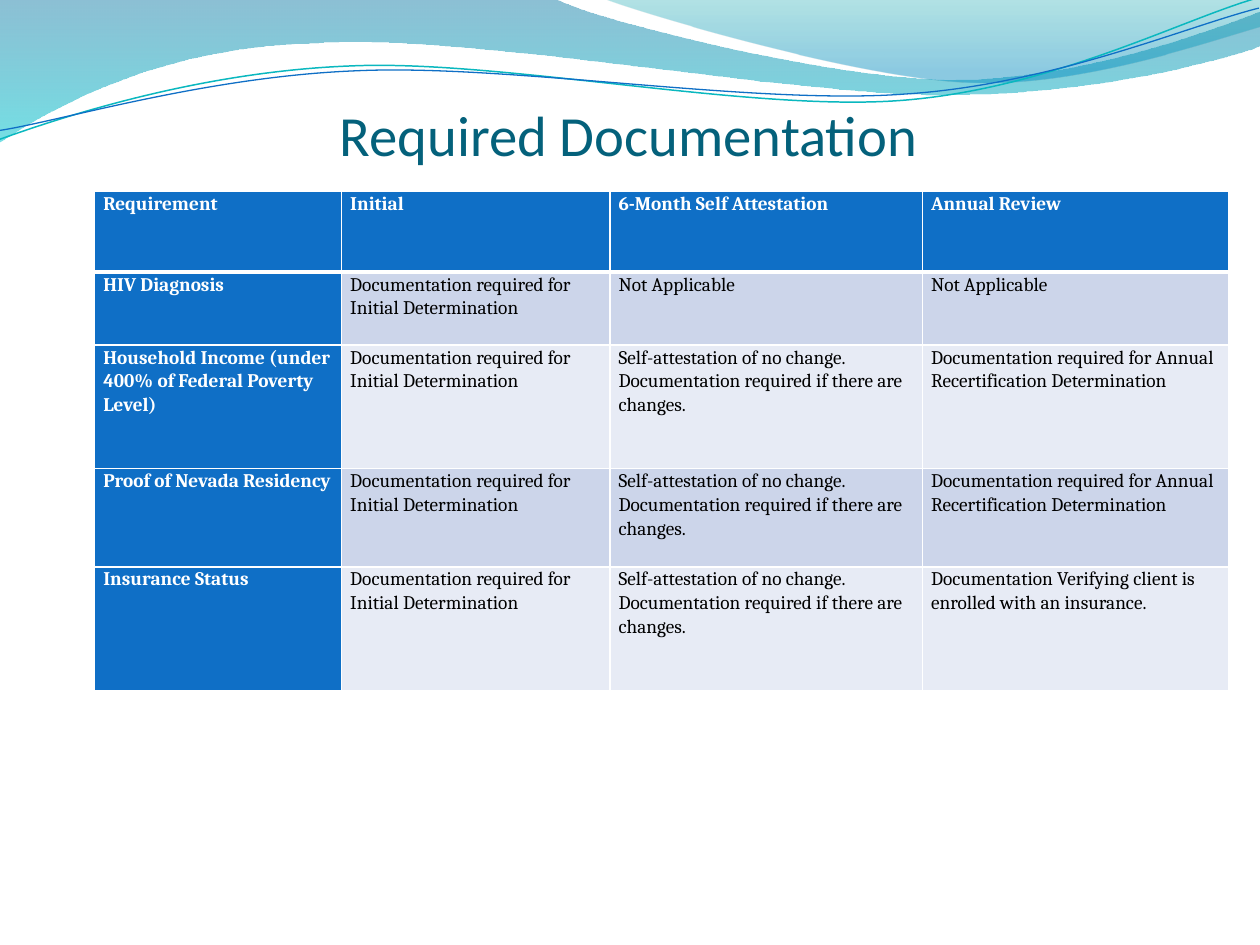
from dataclasses import dataclass

from lxml.etree import SubElement
from pptx import Presentation
from pptx.dml.color import RGBColor
from pptx.enum.text import MSO_ANCHOR, MSO_AUTO_SIZE, PP_ALIGN
from pptx.oxml.ns import qn
from pptx.util import Inches, Pt


@dataclass(frozen=True)
class Theme:
    title_font: str = "Calibri"
    table_font: str = "Cambria"
    title_size: float = 32.4
    table_size: float = 11
    title: str = "04617B"
    accent: str = "0F6FC6"
    teal: str = "0AB8BF"
    white: str = "FFFFFF"
    black: str = "000000"
    bands: tuple = ("CCD5EA", "E7EBF5")


theme = Theme()
prs = Presentation()
prs.slide_width, prs.slide_height = Inches(10), Inches(7.5)
title_only = prs.slide_layouts[5]
slide = prs.slides.add_slide(title_only)


def rgb(value):
    return RGBColor.from_string(value)


def add_wave(start, segments, closed):
    """Put straight (x, y) and cubic (x1, y1, x2, y2, x, y) segments on the layout."""
    builder = slide.shapes.build_freeform(Inches(start[0]), Inches(start[1]))
    builder.add_line_segments(
        [(Inches(x), Inches(y)) for segment in segments
         for x, y in zip(segment[::2], segment[1::2])], close=closed)
    wave = builder.convert_to_shape()
    wave.shadow.inherit = False
    # Merge the three points of each cubic segment into one curve
    lines = iter(list(wave._element.iter(qn("a:lnTo"))))
    for segment in segments:
        curve = next(lines)
        if len(segment) == 6:
            curve.tag = qn("a:cubicBezTo")
            for _ in range(2):
                line = next(lines)
                curve.append(line[0])
                line.getparent().remove(line)
    backdrop = title_only.shapes._spTree
    wave._element.nvSpPr.cNvPr.set("id", str(100 + len(backdrop)))
    backdrop.append(wave._element)
    return wave


# Translucent bands: start, segments, stops of (position, colour, opacity %)
bands = [
    ((0, 0),
     [(4.4, -0.01), (4.76, 0.17, 6.64, 0.63, 7.58, 0.63),
      (8.53, 0.63, 9.58, 0.26, 10, 0.09), (10.01, 0.36),
      (9.83, 0.44, 8.7, 0.76, 7.46, 0.75), (6.22, 0.75, 3.82, 0.28, 2.57, 0.34),
      (1.29, 0.36, 0.46, 0.83, -0.01, 1.13), (0, 0)],
     [(0, "0074A1", 45), (1, "00C6CF", 55)]),
    ((4.79, -0.01),
     [(5.09, 0.11, 6.82, 0.62, 7.69, 0.65), (8.56, 0.69, 9.61, 0.32, 10, 0.21),
      (10, 0), (4.79, -0.01)],
     [(0, "00A1A9", 30), (0.8, "008BBF", 45)]),
]
for start, segments, colours in bands:
    band = add_wave(start, segments, closed=True)
    band.line.fill.background()
    band.fill.gradient()
    band.fill.gradient_angle = 270  # top to bottom
    for stop, (position, colour, _) in zip(band.fill.gradient_stops, colours):
        stop.position = position
        stop.color.rgb = rgb(colour)
    for node, (_, _, opacity) in zip(band._element.iter(qn("a:srgbClr")), colours):
        SubElement(node, qn("a:alpha"), val=str(opacity * 1000))

# Thin wave lines, tilted as a whole: start, segments, colour, width
strands = [
    ((-0.02, 0.87),
     [(0.47, 0.72, 1.58, 0.41, 2.78, 0.42), (3.96, 0.42, 5.91, 0.93, 7.12, 0.9),
      (8.32, 0.87, 9.4, 0.36, 10, 0.22)], theme.teal, 0.85),
    ((-0.02, 0.8),
     [(0.46, 0.75, 1.64, 0.45, 2.83, 0.46), (4.03, 0.46, 5.96, 0.88, 7.16, 0.85),
      (8.35, 0.83, 9.42, 0.42, 10.01, 0.3)], theme.accent, 0.75),
]
for start, segments, colour, width in strands:
    strand = add_wave(start, segments, closed=False)
    strand.rotation = 357.3
    strand.fill.background()
    strand.line.color.rgb = rgb(colour)
    strand.line.width = Pt(width)

title = slide.shapes.title
title.left, title.top = Inches(0.5), Inches(0.77)
title.width, title.height = Inches(9.08), Inches(0.56)
heading = title.text_frame
heading.text = "Required Documentation "
heading.auto_size = MSO_AUTO_SIZE.NONE
heading.vertical_anchor = MSO_ANCHOR.BOTTOM
heading.margin_left = heading.margin_right = heading.margin_bottom = 0
heading.margin_top = Inches(0.05)
heading.paragraphs[0].alignment = PP_ALIGN.CENTER
title_font = heading.paragraphs[0].runs[0].font
title_font.name, title_font.size = theme.title_font, Pt(theme.title_size)
title_font.color.rgb = rgb(theme.title)

initial = "Documentation required for Initial Determination"
no_change = "Self-attestation of no change."
changes = "Documentation required if there are changes."
annual = "Documentation required for Annual Recertification Determination"
requirements = [
    ("Requirement", "Initial", "6-Month Self Attestation", "Annual Review"),
    ("HIV Diagnosis", initial, "Not Applicable", "Not Applicable"),
    ("Household Income (under 400% of Federal Poverty Level)", initial,
     f"{no_change}\n{changes}", annual),
    ("Proof of Nevada Residency", initial, f"{no_change} {changes}", annual),
    ("Insurance Status", initial, f"{no_change} {changes}",
     "Documentation Verifying client is enrolled with an insurance."),
]
column_widths = (1.96, 2.13, 2.48, 2.43)
row_heights = (0.64, 0.58, 0.98, 0.78, 0.98)

table = slide.shapes.add_table(
    len(row_heights), len(column_widths), Inches(0.75), Inches(1.52),
    Inches(sum(column_widths)), Inches(sum(row_heights))).table
table.first_col = True
for column, width in zip(table.columns, column_widths):
    column.width = Inches(width)
for row, height in zip(table.rows, row_heights):
    row.height = Inches(height)

for r, entries in enumerate(requirements):
    for c, entry in enumerate(entries):
        cell = table.cell(r, c)
        is_label = r == 0 or c == 0
        cell.text_frame.text = entry
        cell.margin_left = cell.margin_right = Inches(0.07)
        cell.margin_top = cell.margin_bottom = 0
        # Borders go before the fill in the cell's properties
        for side in "LRTB":
            heavy = (r == 0 and side == "B") or (r == 1 and side == "T")
            border = SubElement(cell._tc.get_or_add_tcPr(), qn(f"a:ln{side}"),
                                w=str(Pt(3 if heavy else 1)))
            SubElement(SubElement(border, qn("a:solidFill")), qn("a:srgbClr"),
                       val=theme.white)
        cell.fill.solid()
        cell.fill.fore_color.rgb = rgb(theme.accent if is_label
                                       else theme.bands[(r - 1) % 2])
        for paragraph in cell.text_frame.paragraphs:
            paragraph.line_spacing = 1.07
            font = paragraph.runs[0].font
            font.name, font.size = theme.table_font, Pt(theme.table_size)
            font.bold = is_label
            font.color.rgb = rgb(theme.white if is_label else theme.black)

prs.save("out.pptx")
